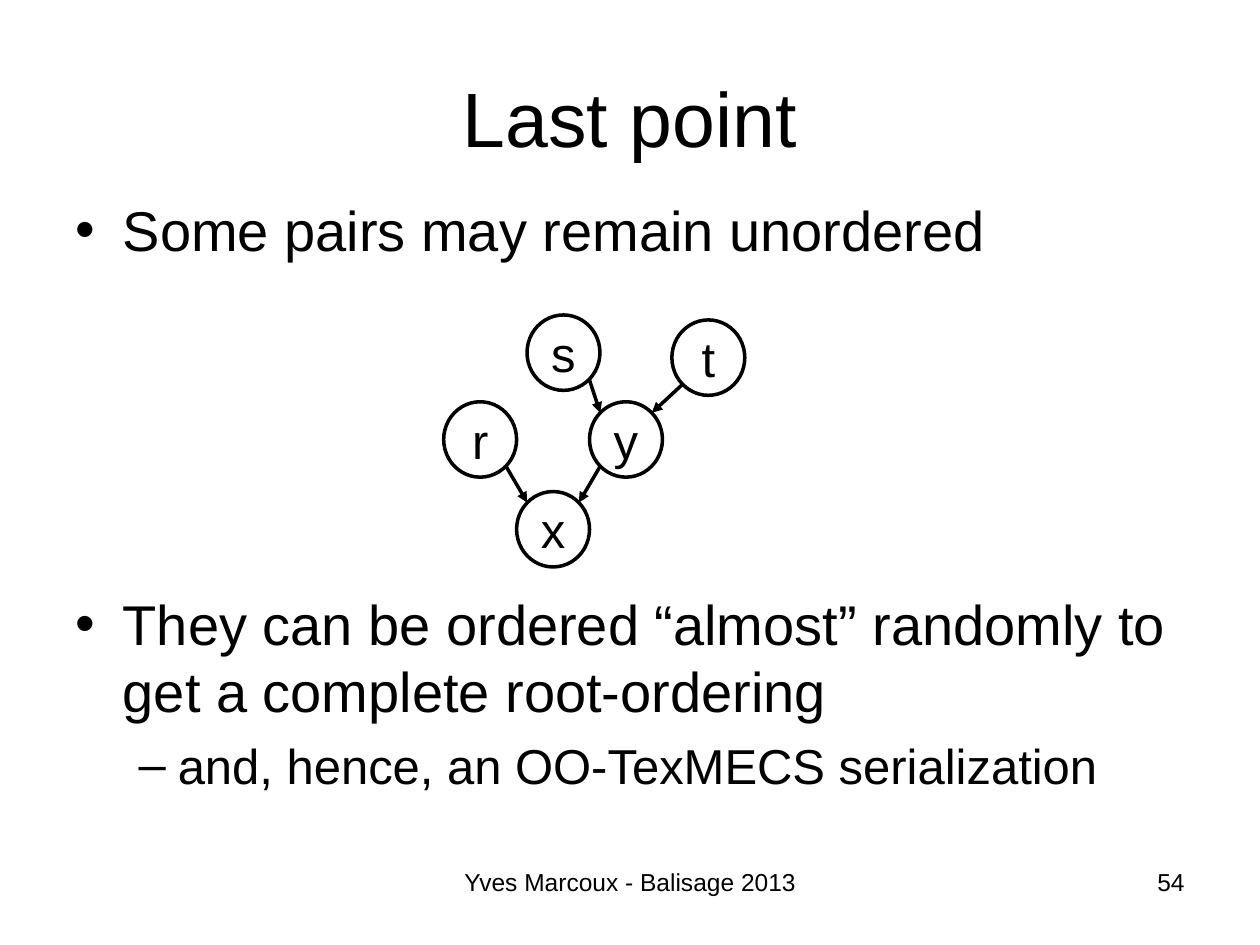
from math import sqrt
from lxml import etree
from pptx import Presentation
from pptx import util as u
from pptx.dml import color
from pptx.enum import shapes, text
from pptx.oxml import ns

COLORS = {"ink": "000000"}
FONT = "Arial"
TITLE = "Last point"
BULLETS = [
    dict(s="Some pairs may remain unordered", char="•", size=32, left=0.95, hang=0.95, before=6.4),
    dict(s="They can be ordered “almost” randomly to get a complete root-ordering",
         char="•", size=32, left=0.95, hang=0.95, before=187),
    dict(s="and, hence, an OO-TexMECS serialization",
         char="–", size=28, left=2.06, hang=0.79, before=6.4, level=1),
]
FOOTERS = [
    ("Yves Marcoux - Balisage 2013", (5.93, 17.35, 13.55, 1.32), text.PP_ALIGN.CENTER),
    ("54", (18.2, 17.35, 5.93, 1.32), text.PP_ALIGN.RIGHT),
]
NODE_W, NODE_H = 1.47, 1.52
NODES = {
    "x": (11.15, 10.67),
    "r": (11.15 - NODE_W, 8.86),
    "y": (11.15 + NODE_W, 8.86),
    "t": (14.28, 7.21),
    "s": (11.36, 7.11),
}
EDGES = [("r", "x"), ("y", "x"), ("s", "y"), ("t", "y")]


def rgb(name):
    return color.RGBColor.from_string(COLORS[name])


def write(p, s, size=28, align=None, before=0, level=0, char=None, left=0, hang=0):
    r = p.add_run()
    r.text = s
    r.font.name, r.font.size = FONT, u.Pt(size)
    r.font.color.rgb = rgb("ink")
    p.level, p.space_before = level, u.Pt(before)
    if align is not None:
        p.alignment = align
    if char:
        pPr = p._p.get_or_add_pPr()
        pPr.set("marL", str(u.Cm(left)))
        pPr.set("indent", str(-u.Cm(hang)))
        etree.SubElement(pPr, ns.qn("a:buChar")).set("char", char)


def place(sp, left, top, width, height):
    sp.left, sp.top, sp.width, sp.height = map(u.Cm, (left, top, width, height))


def rim(name, side, vertical):
    cx, cy = NODES[name]
    return u.Cm(cx + side * NODE_W / 2 / sqrt(2)), u.Cm(cy + vertical * NODE_H / 2 / sqrt(2))


def add_arrow(sl, start, end):
    side = 1 if NODES[start][0] < NODES[end][0] else -1
    sp = sl.shapes.add_connector(shapes.MSO_CONNECTOR.STRAIGHT,
                                 *rim(start, side, 1), *rim(end, -side, -1))
    sp.line.color.rgb, sp.line.width = rgb("ink"), u.Pt(2)
    etree.SubElement(sp.line._get_or_add_ln(), ns.qn("a:tailEnd")).set("type", "triangle")
    etree.SubElement(sp._element.spPr, ns.qn("a:effectLst"))


def add_node(sl, name):
    cx, cy = NODES[name]
    sp = sl.shapes.add_shape(shapes.MSO_SHAPE.OVAL, *map(
        u.Cm, (cx - NODE_W / 2, cy - NODE_H / 2, NODE_W, NODE_H)))
    sp.shadow.inherit = False
    sp.fill.background()
    sp.line.color.rgb, sp.line.width = rgb("ink"), u.Pt(2)
    tf = sp.text_frame
    tf.word_wrap, tf.vertical_anchor = False, text.MSO_ANCHOR.MIDDLE
    write(tf.paragraphs[0], name, align=text.PP_ALIGN.CENTER)


def main():
    prs = Presentation()
    prs.slide_width, prs.slide_height = u.Cm(25.4), u.Cm(19.05)
    sl = prs.slides.add_slide(prs.slide_layouts[1])

    title, body = sl.placeholders
    place(title, 1.27, 0.76, 22.86, 3.18)
    title.text_frame.vertical_anchor = text.MSO_ANCHOR.MIDDLE
    write(title.text_frame.paragraphs[0], TITLE, size=44, align=text.PP_ALIGN.CENTER)

    place(body, 1.27, 3.81, 22.86, 13.21)
    tf = body.text_frame
    tf.auto_size = text.MSO_AUTO_SIZE.NONE
    for i, bullet in enumerate(BULLETS):
        write(tf.add_paragraph() if i else tf.paragraphs[0], **bullet)

    for s, box, align in FOOTERS:
        tf = sl.shapes.add_textbox(*map(u.Cm, box)).text_frame
        tf.word_wrap = True
        write(tf.paragraphs[0], s, size=14, align=align)

    for start, end in EDGES:
        add_arrow(sl, start, end)
    for name in NODES:
        add_node(sl, name)
    prs.save("out.pptx")


if __name__ == "__main__":
    main()
